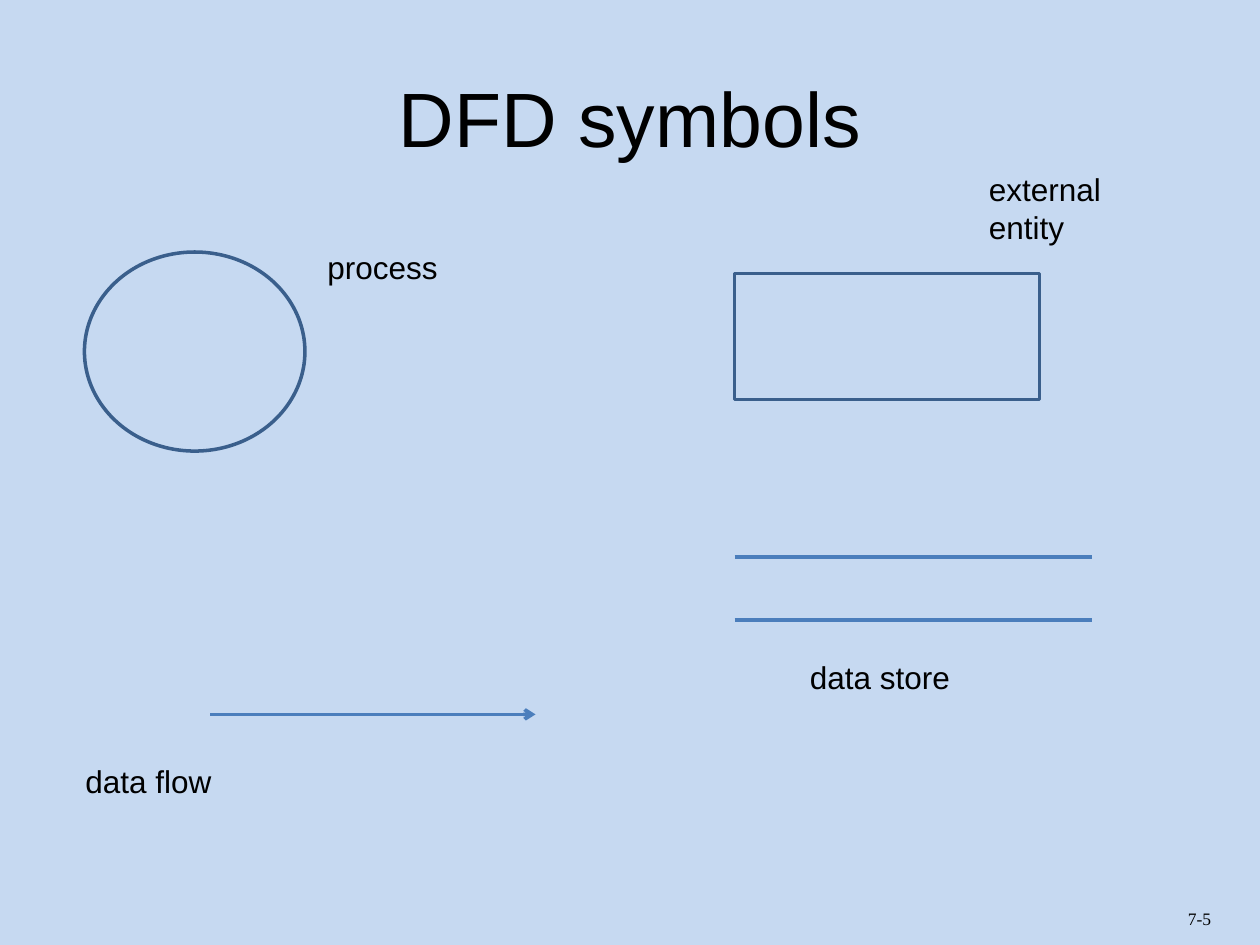
from dataclasses import dataclass

from lxml import etree
from pptx import Presentation
from pptx.dml.color import RGBColor
from pptx.enum.shapes import MSO_CONNECTOR, MSO_SHAPE
from pptx.enum.text import MSO_ANCHOR, MSO_AUTO_SIZE, PP_ALIGN
from pptx.oxml.ns import qn
from pptx.util import Inches, Pt

STRAIGHT = MSO_CONNECTOR.STRAIGHT
OVAL, RECTANGLE = MSO_SHAPE.OVAL, MSO_SHAPE.RECTANGLE
LEFT, CENTER = PP_ALIGN.LEFT, PP_ALIGN.CENTER
TOP, MIDDLE = MSO_ANCHOR.TOP, MSO_ANCHOR.MIDDLE
FIT_TEXT, FIXED = MSO_AUTO_SIZE.SHAPE_TO_FIT_TEXT, MSO_AUTO_SIZE.NONE


@dataclass(frozen=True)
class Theme:
    background = RGBColor.from_string("C6D9F1")
    text = RGBColor.from_string("000000")
    outline = RGBColor.from_string("3A5F8C")
    flow = RGBColor.from_string("4B7EBC")
    line_width = Pt(2)
    title_size = Pt(44)
    label_size = Pt(18)
    number_size = Pt(10)
    font = "Arial"
    number_font = "Times New Roman"


theme = Theme()


def add_text(text, box, size, font=theme.font, align=LEFT, anchor=TOP, fit=FIT_TEXT):
    frame = slide.shapes.add_textbox(*map(Inches, box)).text_frame
    frame_format = {"word_wrap": True, "auto_size": fit, "vertical_anchor": anchor}
    for name, value in frame_format.items():
        setattr(frame, name, value)
    paragraph = frame.paragraphs[0]
    paragraph.alignment = align
    run = paragraph.add_run()
    run.text = text
    for name, value in {"size": size, "name": font}.items():
        setattr(run.font, name, value)
    run.font.color.rgb = theme.text


def add_line(shapes, left, right, y):
    line = shapes.add_connector(
        STRAIGHT, Inches(left), Inches(y), Inches(right), Inches(y))
    line.line.color.rgb = theme.flow
    line.line.width = theme.line_width
    etree.SubElement(line._element.spPr, qn("a:effectLst"))
    return line


prs = Presentation()
prs.slide_width, prs.slide_height = Inches(10), Inches(7.5)
slide = prs.slides.add_slide(prs.slide_layouts[6])
slide.background.fill.solid()
slide.background.fill.fore_color.rgb = theme.background

# Page number and title
add_text("7-5", (9.33, 7.16, 0.67, 0.27), theme.number_size, theme.number_font)
add_text("DFD symbols", (0.5, 0.3, 9, 1.25), theme.title_size,
         align=CENTER, anchor=MIDDLE, fit=FIXED)

# Process and external entity outlines
for kind, box in (
    (OVAL, (0.67, 2, 1.75, 1.58)),
    (RECTANGLE, (5.83, 2.17, 2.42, 1)),
):
    symbol = slide.shapes.add_shape(kind, *map(Inches, box))
    symbol.shadow.inherit = False
    symbol.fill.background()
    symbol.line.color.rgb = theme.outline
    symbol.line.width = theme.line_width

# Data flow arrow
data_flow = add_line(slide.shapes, 1.67, 4.25, 5.67)
etree.SubElement(data_flow.line._get_or_add_ln(), qn("a:tailEnd"), type="arrow")

# Data store: a pair of parallel lines
data_store = slide.shapes.add_group_shape()
for y in (4.42, 4.92):
    add_line(data_store.shapes, 5.83, 8.67, y)

# Symbol labels
for label, left, top, height in (
    ("process", 2.5, 1.92, 0.4),
    ("external entity", 7.75, 1.3, 0.71),
    ("data flow", 0.58, 6, 0.4),
    ("data store", 6.33, 5.17, 0.4),
):
    add_text(label, (left, top, 1.58, height), theme.label_size)

prs.save("out.pptx")
